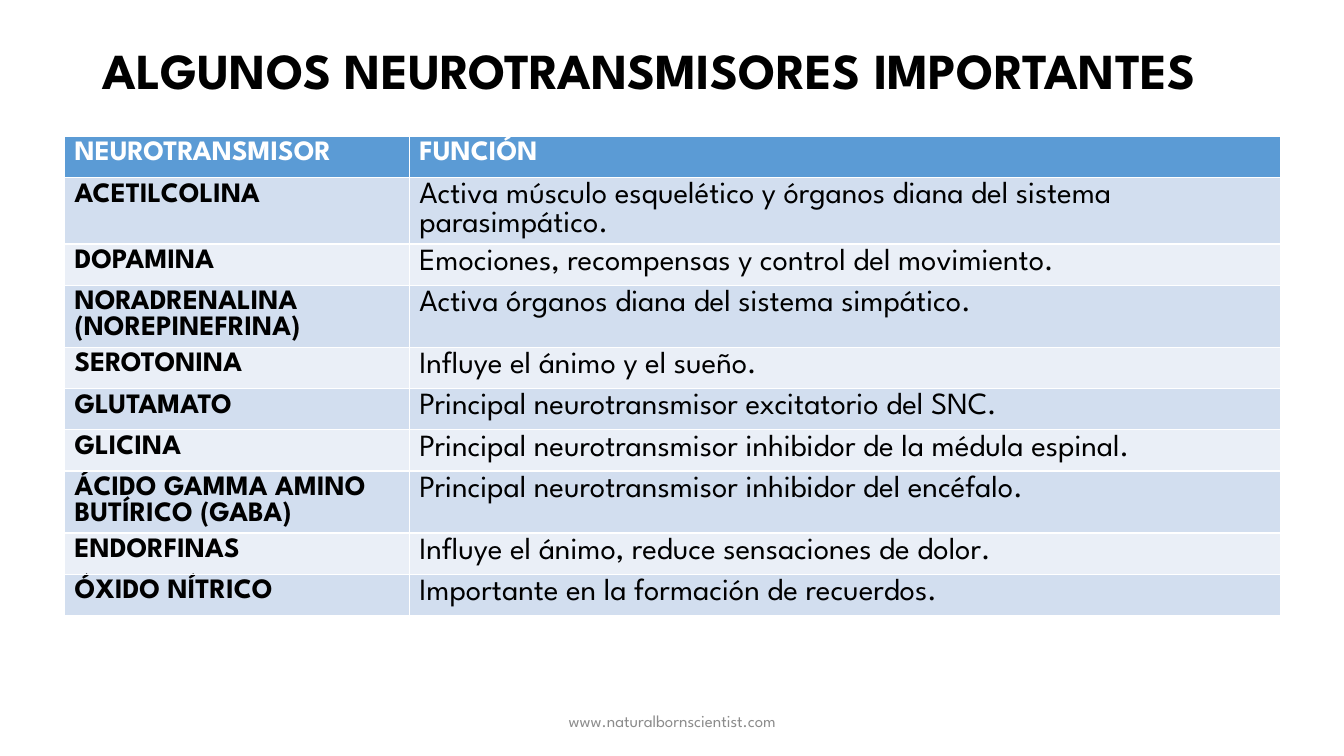
"""Build a slide with a table of important neurotransmitters."""
import pptx
import pptx.dml.color
import pptx.enum.text
import pptx.util
from pptx.util import Inches

FONT = "League Spartan"


def color(value):
    return pptx.dml.color.RGBColor.from_string(value)


def format_text(paragraph, size, text_color, bold=False):
    paragraph.font.name = FONT
    paragraph.font.size = pptx.util.Pt(size)
    paragraph.font.bold = bold
    paragraph.font.color.rgb = color(text_color)


rows = [
    ("NEUROTRANSMISOR", "FUNCIÓN"),
    ("ACETILCOLINA", "Activa músculo esquelético y órganos diana del sistema parasimpático."),
    ("DOPAMINA", "Emociones, recompensas y control del movimiento."),
    ("NORADRENALINA (NOREPINEFRINA)", "Activa órganos diana del sistema simpático."),
    ("SEROTONINA", "Influye el ánimo y el sueño."),
    ("GLUTAMATO", "Principal neurotransmisor excitatorio del SNC."),
    ("GLICINA", "Principal neurotransmisor inhibidor de la médula espinal."),
    ("ÁCIDO GAMMA AMINO BUTÍRICO (GABA)", "Principal neurotransmisor inhibidor del encéfalo."),
    ("ENDORFINAS", "Influye el ánimo, reduce sensaciones de dolor."),
    ("ÓXIDO NÍTRICO", "Importante en la formación de recuerdos."),
]
column_widths = [3.42, 8.64]
row_height = 0.41

presentation = pptx.Presentation()
presentation.slide_width = Inches(13.33)
presentation.slide_height = Inches(7.5)
slide = presentation.slides.add_slide(presentation.slide_layouts[5])

title = slide.shapes.title
title.left, title.top = Inches(0.92), Inches(0)
title.width, title.height = Inches(11.5), Inches(1.45)
title.text_frame.text = "ALGUNOS NEUROTRANSMISORES IMPORTANTES"
title.text_frame.auto_size = pptx.enum.text.MSO_AUTO_SIZE.NONE
title.text_frame.vertical_anchor = pptx.enum.text.MSO_ANCHOR.MIDDLE
title_paragraph = title.text_frame.paragraphs[0]
title_paragraph.alignment = pptx.enum.text.PP_ALIGN.LEFT
title_paragraph.line_spacing = 0.9
format_text(title_paragraph, 36, "000000", bold=True)

table = slide.shapes.add_table(
    len(rows), len(column_widths), Inches(0.64), Inches(1.35),
    Inches(sum(column_widths)), Inches(row_height * len(rows))).table
for column, width in zip(table.columns, column_widths):
    column.width = Inches(width)
for row_index, row in enumerate(rows):
    table.rows[row_index].height = Inches(row_height)
    is_header = row_index == 0
    band = "D2DEEF" if row_index % 2 else "EAEFF7"
    for column_index, text in enumerate(row):
        cell = table.cell(row_index, column_index)
        cell.text = text
        cell.fill.solid()
        cell.fill.fore_color.rgb = color("5B9BD5" if is_header else band)
        is_heading = is_header or column_index == 0
        format_text(cell.text_frame.paragraphs[0], 20 if is_heading else 22,
                    "FFFFFF" if is_header else "000000", bold=is_heading)

footer = slide.shapes.add_textbox(Inches(4.42), Inches(6.95), Inches(4.5), Inches(0.4))
footer.text_frame.word_wrap = True
footer.text_frame.vertical_anchor = pptx.enum.text.MSO_ANCHOR.MIDDLE
footer.text_frame.text = "www.naturalbornscientist.com"
footer_paragraph = footer.text_frame.paragraphs[0]
footer_paragraph.alignment = pptx.enum.text.PP_ALIGN.CENTER
format_text(footer_paragraph, 12, "8C8C8C")

presentation.save("out.pptx")
